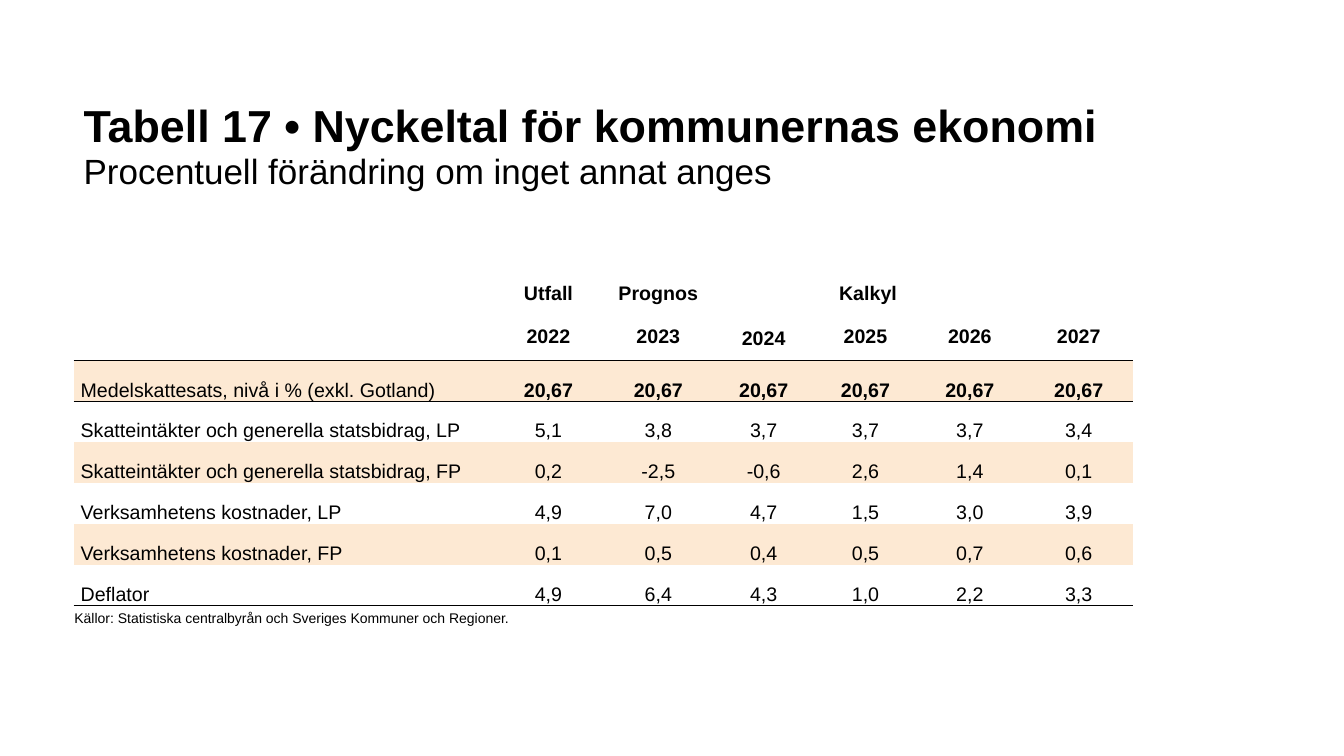
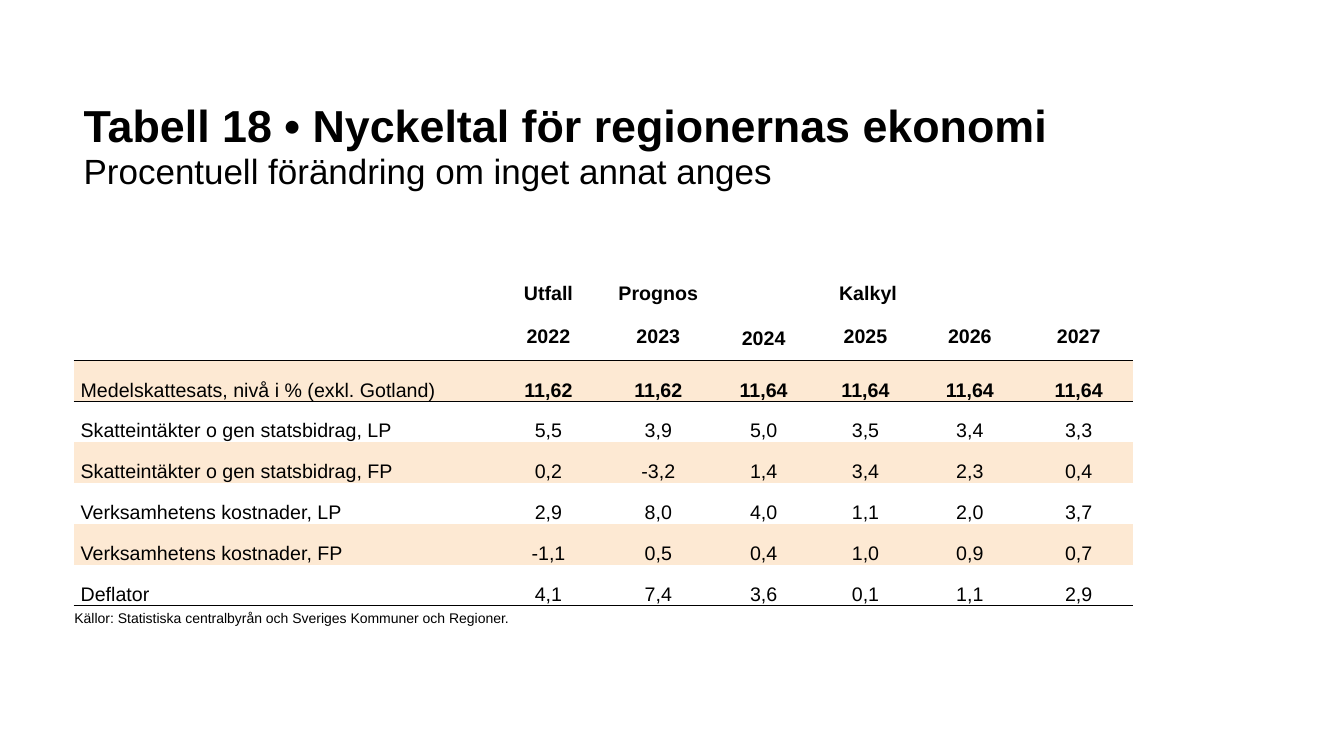
"""Build two slides with key economic figures for Swedish municipalities and regions."""
from lxml import etree
from pptx import Presentation
from pptx.dml.color import RGBColor
from pptx.enum import text
from pptx.oxml.ns import qn
from pptx.util import Inches, Pt

COLORS = {"ink": "000000", "band": "FDE9D3"}
FONT = "Arial"
NO_STYLE = "{2D5ABB26-0587-4C30-8999-92F81FD0307C}"
LEFT, TABLE_TOP, WIDTH = 0.73, 2.73, 10.51
TABLE_HEIGHT, YEAR_ROW_HEIGHT = 3.28, 0.44
COLUMN_WIDTHS = [4.15, 1.12, 1.06, 1.03, 0.99, 1.08, 1.08]
SUBTITLE = "Procentuell förändring om inget annat anges"
SOURCE = "Källor: Statistiska centralbyrån och Sveriges Kommuner och Regioner."
HEADER_ROWS = [
    ["", "Utfall", "Prognos", "Kalkyl", "", "", ""],
    ["", "2022", "2023", "2024", "2025", "2026", "2027"],
]
LABEL_SPACING = {"line_spacing": Pt(13), "space_after": Pt(1)}
CELL_FORMAT = {
    "margin_left": Inches(0.07), "margin_right": Inches(0.07),
    "margin_top": 0, "margin_bottom": 0,
}

REPORTS = [
    {
        "title": "Tabell 17 • Nyckeltal för kommunernas ekonomi",
        "value_spacing": {"line_spacing": Pt(12), "space_after": Pt(2)},
        "rows": [
            ["Medelskattesats, nivå i % (exkl. Gotland)", "20,67", "20,67", "20,67", "20,67", "20,67", "20,67"],
            ["Skatteintäkter och generella statsbidrag, LP", "5,1", "3,8", "3,7", "3,7", "3,7", "3,4"],
            ["Skatteintäkter och generella statsbidrag, FP", "0,2", "-2,5", "-0,6", "2,6", "1,4", "0,1"],
            ["Verksamhetens kostnader, LP", "4,9", "7,0", "4,7", "1,5", "3,0", "3,9"],
            ["Verksamhetens kostnader, FP", "0,1", "0,5", "0,4", "0,5", "0,7", "0,6"],
            ["Deflator", "4,9", "6,4", "4,3", "1,0", "2,2", "3,3"],
        ],
    },
    {
        "title": "Tabell 18 • Nyckeltal för regionernas ekonomi",
        "value_spacing": LABEL_SPACING,
        "rows": [
            ["Medelskattesats, nivå i % (exkl. Gotland)", "11,62", "11,62", "11,64", "11,64", "11,64", "11,64"],
            ["Skatteintäkter o gen statsbidrag, LP", "5,5", "3,9", "5,0", "3,5", "3,4", "3,3"],
            ["Skatteintäkter o gen statsbidrag, FP", "0,2", "-3,2", "1,4", "3,4", "2,3", "0,4"],
            ["Verksamhetens kostnader, LP", "2,9", "8,0", "4,0", "1,1", "2,0", "3,7"],
            ["Verksamhetens kostnader, FP", "-1,1", "0,5", "0,4", "1,0", "0,9", "0,7"],
            ["Deflator", "4,1", "7,4", "3,6", "0,1", "1,1", "2,9"],
        ],
    },
]


def set_font(font, size, bold=False):
    for name, value in {"name": FONT, "size": Pt(size), "bold": bold}.items():
        setattr(font, name, value)
    font.color.rgb = RGBColor.from_string(COLORS["ink"])


def add_rule(cell, side):
    rule = etree.Element(qn(f"a:ln{side}"), w=str(Pt(1)))
    fill = etree.SubElement(rule, qn("a:solidFill"))
    etree.SubElement(fill, qn("a:srgbClr"), val=COLORS["ink"])
    cell._tc.get_or_add_tcPr().insert(0, rule)


deck = Presentation()
deck.slide_width, deck.slide_height = Inches(13.33), Inches(7.5)
layout = deck.slide_layouts.get_by_name("Title Only")

title_style = deck.slide_master.element.find(".//" + qn("p:titleStyle") + "/" + qn("a:lvl1pPr"))
title_style.set("algn", "l")
title_defaults = title_style.find(qn("a:defRPr"))
title_defaults.set("sz", "3200")
title_defaults.find(qn("a:latin")).set("typeface", FONT)

for report in REPORTS:
    slide = deck.slides.add_slide(layout)

    title = slide.shapes.title
    title_place = {"left": LEFT, "top": 0.96, "width": WIDTH, "height": 1.35}
    for name, value in title_place.items():
        setattr(title, name, Inches(value))
    title.text_frame.vertical_anchor = text.MSO_ANCHOR.TOP
    title.text_frame.auto_size = text.MSO_AUTO_SIZE.NONE
    heading = title.text_frame.paragraphs[0]
    heading.line_spacing = 0.95
    headline = heading.add_run()
    headline.text = report["title"]
    set_font(headline.font, 32, bold=True)
    heading.add_line_break()
    subtitle = heading.add_run()
    subtitle.text = SUBTITLE
    set_font(subtitle.font, 25)

    rows = HEADER_ROWS + report["rows"]
    frame = slide.shapes.add_table(
        len(rows), len(COLUMN_WIDTHS),
        Inches(LEFT), Inches(TABLE_TOP), Inches(WIDTH), Inches(TABLE_HEIGHT),
    )
    figures = frame.table
    figures.first_row = figures.horz_banding = False
    figures._tbl.tblPr.find(qn("a:tableStyleId")).text = NO_STYLE
    for column, width in zip(figures.columns, COLUMN_WIDTHS):
        column.width = Inches(width)
    for row in figures.rows:
        row.height = Inches((TABLE_HEIGHT - YEAR_ROW_HEIGHT) / (len(rows) - 1))
    figures.rows[1].height = Inches(YEAR_ROW_HEIGHT)
    figures.cell(0, 3).merge(figures.cell(0, 5))

    for r, row in enumerate(rows):
        is_header = r < len(HEADER_ROWS)
        for c, entry in enumerate(row):
            cell = figures.cell(r, c)
            for name, value in CELL_FORMAT.items():
                setattr(cell, name, value)
            cell.vertical_anchor = text.MSO_ANCHOR.MIDDLE if is_header else text.MSO_ANCHOR.BOTTOM
            if not is_header and r % 2 == 0:
                cell.fill.solid()
                cell.fill.fore_color.rgb = RGBColor.from_string(COLORS["band"])
            else:
                cell.fill.background()
            if r in (1, len(rows) - 1):
                add_rule(cell, "B")
            elif r == 2:
                add_rule(cell, "T")

            line = cell.text_frame.paragraphs[0]
            line.alignment = text.PP_ALIGN.CENTER if c else text.PP_ALIGN.LEFT
            spacing = LABEL_SPACING if is_header or c == 0 else report["value_spacing"]
            if entry != "2024":
                for name, value in spacing.items():
                    setattr(line, name, value)
            if entry:
                run = line.add_run()
                run.text = entry
                set_font(run.font, 14, bold=is_header or (r == 2 and c > 0))
            else:
                set_font(line.font, 14)

    source = slide.shapes.add_textbox(Inches(0.64), Inches(6), Inches(6.67), Inches(0.27))
    source.text_frame.word_wrap = True
    source.text_frame.auto_size = text.MSO_AUTO_SIZE.SHAPE_TO_FIT_TEXT
    citation = source.text_frame.paragraphs[0].add_run()
    citation.text = SOURCE
    set_font(citation.font, 10)

deck.save("out.pptx")
